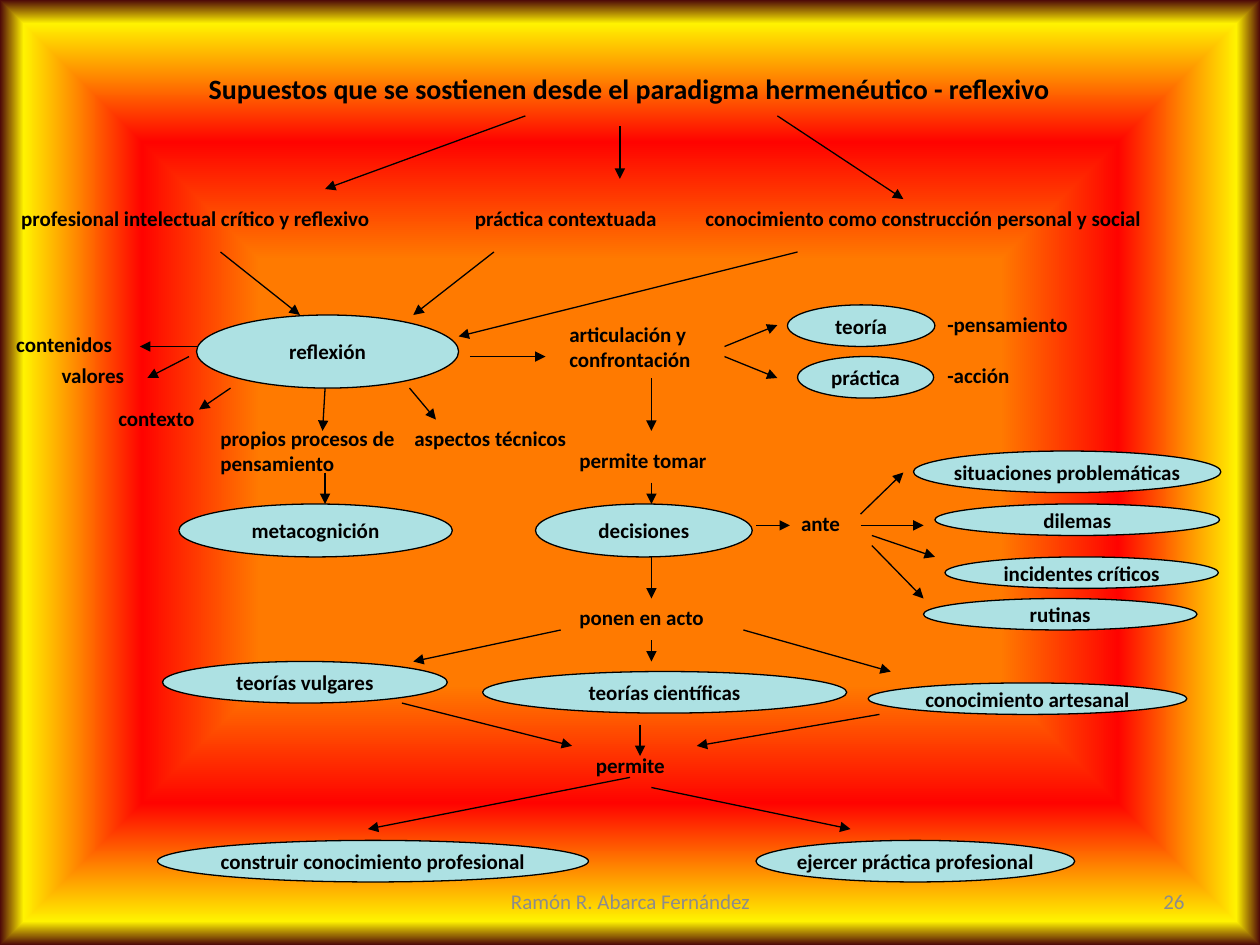
from typing import NamedTuple

from lxml.etree import SubElement
from pptx import Presentation
from pptx.dml.color import RGBColor
from pptx.enum.shapes import MSO_CONNECTOR, MSO_SHAPE
from pptx.enum.text import MSO_ANCHOR, MSO_AUTO_SIZE, PP_ALIGN
from pptx.oxml import parse_xml
from pptx.oxml.ns import nsdecls, qn
from pptx.util import Inches, Pt

COLORS = {"text": "000000", "line": "000000", "node": "ADE1E3", "footer": "8C8C8C"}
BACKGROUND_STOPS = [(0, "FF7A00"), (45, "FF7A00"), (70, "FF0300"), (95, "FFF200"), (100, "4D0808")]


class Label(NamedTuple):
    text: str
    left: float
    top: float
    width: float
    height: float = 0.3
    size: int = 12
    align: PP_ALIGN = PP_ALIGN.LEFT
    color: str = "text"
    bold: bool = True
    anchor: MSO_ANCHOR = MSO_ANCHOR.TOP


class Node(NamedTuple):
    text: str
    left: float
    top: float
    width: float
    height: float = 0.33


class Arrow(NamedTuple):
    x1: float
    y1: float
    x2: float
    y2: float


LABELS = [
    # Title and the three assumptions
    Label("Supuestos que se sostienen desde el paradigma hermenéutico - reflexivo",
          0.39, 0.52, 9.21, 0.37, size=16, align=PP_ALIGN.CENTER),
    Label("profesional intelectual crítico y reflexivo", 0.07, 1.58, 3.45),
    Label("práctica contextuada", 3.67, 1.58, 2.44),
    Label("conocimiento como construcción personal y social", 5.5, 1.58, 4.5),
    # Around reflexión
    Label("contenidos", 0.03, 2.58, 1.35),
    Label("valores", 0.39, 2.83, 0.99),
    Label("contexto", 0.84, 3.17, 1.08),
    Label("propios procesos de pensamiento", 1.65, 3.33, 1.62, 0.5),
    Label("aspectos técnicos", 3.19, 3.33, 1.62, 0.5),
    # Central column
    Label("articulación y confrontación", 4.42, 2.5, 1.48, 0.5),
    Label("permite tomar", 4.5, 3.5, 1.72),
    Label("ponen en acto", 4.5, 4.75, 1.53),
    Label("permite", 4.63, 5.92, 1.08),
    # Right side
    Label("-pensamiento", 7.42, 2.42, 1.44),
    Label("-acción", 7.42, 2.83, 1.08),
    Label("ante", 6.26, 4, 0.63),
    # Footer
    Label("26", 7.17, 6.95, 2.33, 0.4, align=PP_ALIGN.RIGHT,
          color="footer", bold=False, anchor=MSO_ANCHOR.MIDDLE),
    Label("Ramón R. Abarca Fernández", 3.42, 6.95, 3.17, 0.4, align=PP_ALIGN.CENTER,
          color="footer", bold=False, anchor=MSO_ANCHOR.MIDDLE),
]

NODES = [
    Node("reflexión", 1.56, 2.5, 2.08, 0.58),
    Node("metacognición", 1.42, 4, 2.17, 0.42),
    Node("decisiones", 4.25, 4, 1.72, 0.42),
    Node("teoría", 6.25, 2.42, 1.17),
    Node("práctica", 6.33, 2.83, 1.08),
    Node("situaciones problemáticas", 7.25, 3.58, 2.44),
    Node("dilemas", 7.42, 4, 2.26, 0.25),
    Node("incidentes críticos", 7.5, 4.42, 2.17, 0.25),
    Node("rutinas", 7.33, 4.75, 2.17, 0.25),
    Node("teorías vulgares", 1.29, 5.25, 2.26),
    Node("teorías científicas", 3.83, 5.33, 2.89),
    Node("conocimiento artesanal", 6.89, 5.42, 2.53, 0.25),
    Node("construir conocimiento profesional", 1.25, 6.67, 3.42),
    Node("ejercer práctica profesional", 6, 6.67, 2.53),
]

ARROWS = [
    # Title to assumptions
    Arrow(4.17, 0.92, 2.58, 1.5), Arrow(4.92, 1, 4.92, 1.42), Arrow(6.17, 0.92, 7.17, 1.58),
    # Assumptions to reflexión
    Arrow(1.75, 2, 2.38, 2.5), Arrow(3.92, 2, 3.28, 2.5), Arrow(6.33, 2, 3.64, 2.67),
    # Out of reflexión
    Arrow(3.25, 3.08, 3.46, 3.33), Arrow(2.58, 3.08, 2.56, 3.42), Arrow(1.83, 3.08, 1.58, 3.25),
    Arrow(1.5, 2.83, 1.17, 3), Arrow(1.56, 2.75, 1.11, 2.75), Arrow(3.73, 2.83, 4.33, 2.83),
    Arrow(2.58, 3.75, 2.58, 4),
    # Down the central column
    Arrow(5.17, 3, 5.17, 3.42), Arrow(5.17, 3.83, 5.17, 4), Arrow(5.17, 4.42, 5.17, 4.75),
    Arrow(5.17, 5.08, 5.17, 5.25), Arrow(5.08, 5.75, 5.08, 6),
    # To teoría and práctica
    Arrow(5.75, 2.75, 6.17, 2.58), Arrow(5.75, 2.83, 6.17, 3),
    # Decisiones to the four situations
    Arrow(6, 4.17, 6.27, 4.17), Arrow(6.83, 4.08, 7.17, 3.75), Arrow(6.83, 4.17, 7.33, 4.17),
    Arrow(6.92, 4.25, 7.42, 4.42), Arrow(6.92, 4.33, 7.33, 4.75),
    # Into and out of the theories
    Arrow(4.45, 5, 3.28, 5.25), Arrow(5.9, 5, 7.07, 5.33),
    Arrow(3.19, 5.58, 4.54, 5.92), Arrow(6.98, 5.67, 5.53, 5.92),
    # Permite to the results
    Arrow(5, 6.17, 2.92, 6.58), Arrow(5.17, 6.25, 6.75, 6.58),
]


def rgb(name: str) -> RGBColor:
    return RGBColor.from_string(COLORS[name])


def set_background(slide) -> None:
    stops = "".join(
        f'<a:gs pos="{position * 1000}"><a:srgbClr val="{color}"/></a:gs>'
        for position, color in BACKGROUND_STOPS
    )
    slide.element.cSld.insert(0, parse_xml(
        f'<p:bg {nsdecls("p", "a")}><p:bgPr><a:gradFill rotWithShape="1">'
        f'<a:gsLst>{stops}</a:gsLst><a:path path="rect">'
        '<a:fillToRect l="50000" t="50000" r="50000" b="50000"/></a:path>'
        '</a:gradFill><a:effectLst/></p:bgPr></p:bg>'
    ))


def write_text(shape, text: str, size: int, align: PP_ALIGN, color: str, bold: bool) -> None:
    paragraph = shape.text_frame.paragraphs[0]
    paragraph.text = text
    paragraph.alignment = align
    paragraph.font.name = "Calibri"
    paragraph.font.size = Pt(size)
    paragraph.font.bold = bold
    paragraph.font.color.rgb = rgb(color)


def add_label(slide, label: Label) -> None:
    box = slide.shapes.add_textbox(
        Inches(label.left), Inches(label.top), Inches(label.width), Inches(label.height))
    box.text_frame.word_wrap = True
    box.text_frame.vertical_anchor = label.anchor
    if label.anchor == MSO_ANCHOR.TOP:
        box.text_frame.auto_size = MSO_AUTO_SIZE.SHAPE_TO_FIT_TEXT
    write_text(box, label.text, label.size, label.align, label.color, label.bold)


def add_node(slide, node: Node) -> None:
    ellipse = slide.shapes.add_shape(
        MSO_SHAPE.OVAL, Inches(node.left), Inches(node.top), Inches(node.width), Inches(node.height))
    ellipse.shadow.inherit = False
    ellipse.fill.solid()
    ellipse.fill.fore_color.rgb = rgb("node")
    ellipse.line.color.rgb = rgb("line")
    ellipse.line.width = Pt(0.75)
    ellipse.text_frame.word_wrap = False
    ellipse.text_frame.vertical_anchor = MSO_ANCHOR.MIDDLE
    write_text(ellipse, node.text, 12, PP_ALIGN.CENTER, "text", True)


def add_arrow(slide, arrow: Arrow) -> None:
    connector = slide.shapes.add_connector(
        MSO_CONNECTOR.STRAIGHT, *(Inches(length) for length in arrow))
    connector.line.color.rgb = rgb("line")
    connector.line.width = Pt(0.75)
    SubElement(connector.line._get_or_add_ln(), qn("a:tailEnd"), type="triangle")
    SubElement(connector.element.spPr, qn("a:effectLst"))


def main() -> None:
    presentation = Presentation()
    presentation.slide_width, presentation.slide_height = Inches(10), Inches(7.5)
    slide = presentation.slides.add_slide(presentation.slide_layouts[6])
    set_background(slide)
    for node in NODES:
        add_node(slide, node)
    for arrow in ARROWS:
        add_arrow(slide, arrow)
    for label in LABELS:
        add_label(slide, label)
    presentation.save("out.pptx")


if __name__ == "__main__":
    main()
